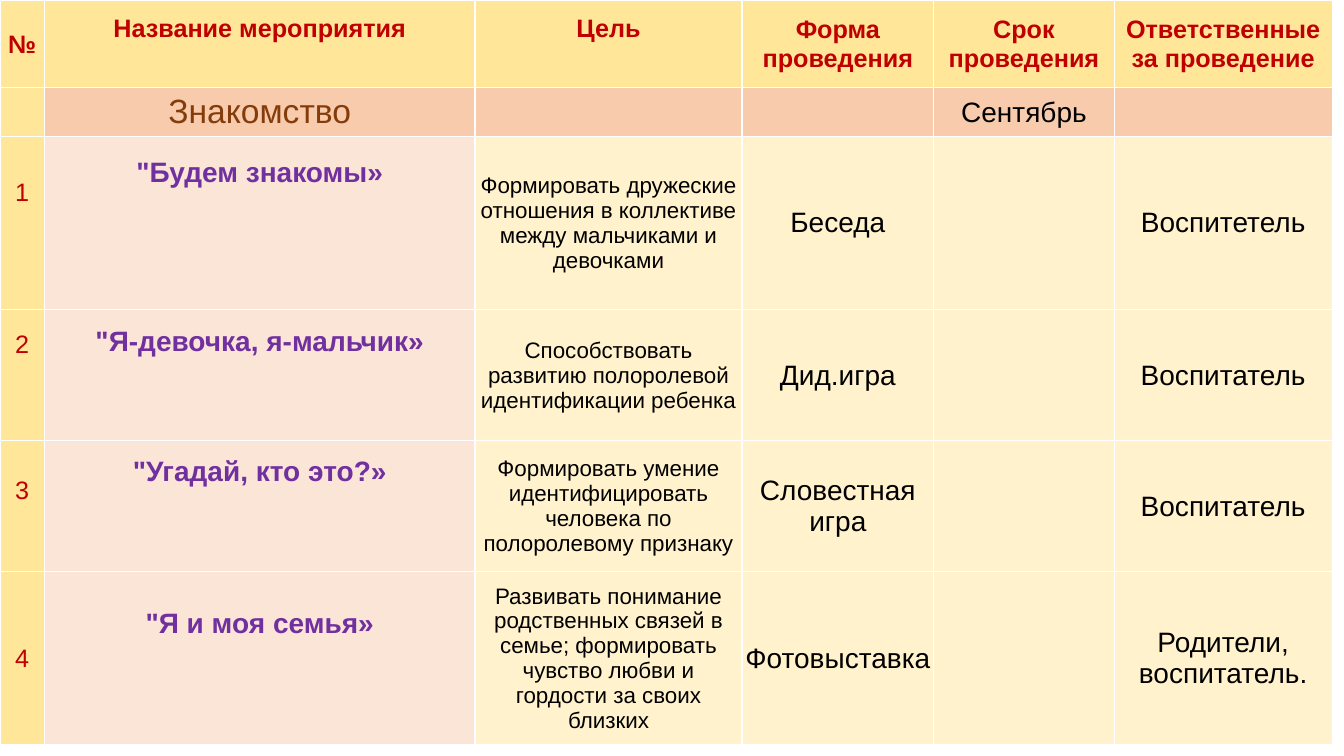
"""Build a one-slide September activity plan as a full-page table."""
from dataclasses import dataclass

from lxml.etree import SubElement
from pptx import Presentation
from pptx.dml.color import RGBColor
from pptx.enum.text import MSO_ANCHOR, PP_ALIGN
from pptx.oxml.ns import qn
from pptx.table import _Cell as Cell
from pptx.util import Cm, Pt

RED = RGBColor(0xC0, 0x00, 0x00)
BROWN = RGBColor(0x84, 0x3C, 0x0B)
PURPLE = RGBColor(0x70, 0x30, 0xA0)
BLACK = RGBColor(0x00, 0x00, 0x00)
WHITE = RGBColor(0xFF, 0xFF, 0xFF)
GOLD = RGBColor(0xFF, 0xE6, 0x99)
CREAM = RGBColor(0xFF, 0xF2, 0xCC)
PEACH = RGBColor(0xF8, 0xCB, 0xAD)
BLUSH = RGBColor(0xFB, 0xE5, 0xD6)

COL_WIDTHS = (1.12, 10.85, 6.73, 4.83, 4.55, 5.49)
ROW_HEIGHTS = (2.21, 1.22, 4.37, 3.3, 3.3, 4.37)


@dataclass(frozen=True)
class Style:
    size: int
    color: RGBColor
    fill: RGBColor
    bold: bool = False


@dataclass(frozen=True)
class Activity:
    name: str
    goal: str
    form: str
    leader: str
    number_lift: float
    name_lift: float


HEADER = Style(18, RED, GOLD, True)
NUMBER = Style(18, RED, GOLD)
TOPIC = Style(24, BROWN, PEACH)
MONTH = Style(20, BLACK, PEACH)
NAME = Style(20, PURPLE, BLUSH, True)
GOAL = Style(16, BLACK, CREAM)
DETAIL = Style(20, BLACK, CREAM)

HEADINGS = (
    ("№", 0),
    ("Название мероприятия", 0.76),
    ("Цель", 0.76),
    ("Форма проведения", 0),
    ("Срок проведения", 0),
    ("Ответственные за проведение", 0),
)
ACTIVITIES = (
    Activity('"Будем знакомы»',
             "Формировать дружеские отношения в коллективе между мальчиками и девочками",
             "Беседа", "Воспитетель", 1.56, 2.52),
    Activity('"Я-девочка, я-мальчик»',
             "Способствовать развитию полоролевой идентификации ребенка",
             "Дид.игра", "Воспитатель", 1.56, 1.71),
    Activity('"Угадай, кто это?»',
             "Формировать умение идентифицировать человека по полоролевому признаку",
             "Словестная игра", "Воспитатель", 0.8, 1.76),
    Activity('"Я и моя семья»',
             "Развивать понимание родственных связей в семье; "
             "формировать чувство любви и гордости за своих близких",
             "Фотовыставка", "Родители, воспитатель.", 0, 1.76),
)


def add_borders(cell: Cell) -> None:
    """Draw thin white lines on all four sides of a cell."""
    props = cell._tc.get_or_add_tcPr()
    for side in ("a:lnL", "a:lnR", "a:lnT", "a:lnB"):
        line = SubElement(props, qn(side), w=str(Pt(1)))
        solid = SubElement(line, qn("a:solidFill"))
        SubElement(solid, qn("a:srgbClr"), val=str(WHITE))


def fill_cell(cell: Cell, text: str, style: Style, lift: float = 0) -> None:
    """Format a cell, raising its centred text with a bottom margin."""
    add_borders(cell)
    cell.fill.solid()
    cell.fill.fore_color.rgb = style.fill
    cell.vertical_anchor = MSO_ANCHOR.MIDDLE
    cell.margin_left = cell.margin_right = cell.margin_top = Cm(0.02)
    cell.margin_bottom = Cm(lift)
    p = cell.text_frame.paragraphs[0]
    p.text = text
    p.alignment = PP_ALIGN.CENTER
    p.font.name = "Arial"
    p.font.size = Pt(style.size)
    p.font.bold = style.bold
    p.font.color.rgb = style.color


def main() -> None:
    """Create the slide and save it."""
    prs = Presentation()
    prs.slide_width, prs.slide_height = Cm(33.87), Cm(19.05)
    s = prs.slides.add_slide(prs.slide_layouts[6])
    table = s.shapes.add_table(len(ROW_HEIGHTS), len(COL_WIDTHS), 0, 0,
                               Cm(sum(COL_WIDTHS)), Cm(sum(ROW_HEIGHTS))).table
    table.first_row = table.horz_banding = False
    for column, width in zip(table.columns, COL_WIDTHS):
        column.width = Cm(width)
    for row, height in zip(table.rows, ROW_HEIGHTS):
        row.height = Cm(height)

    rows = [
        [(text, HEADER, lift) for text, lift in HEADINGS],
        [("", NUMBER), ("Знакомство", TOPIC), ("", MONTH), ("", MONTH),
         ("Сентябрь", MONTH), ("", MONTH)],
    ]
    for number, a in enumerate(ACTIVITIES, 1):
        rows.append([(str(number), NUMBER, a.number_lift), (a.name, NAME, a.name_lift),
                     (a.goal, GOAL), (a.form, DETAIL), ("", DETAIL), (a.leader, DETAIL)])
    for row, contents in zip(table.rows, rows):
        for cell, content in zip(row.cells, contents):
            fill_cell(cell, *content)
    prs.save("out.pptx")


if __name__ == "__main__":
    main()
